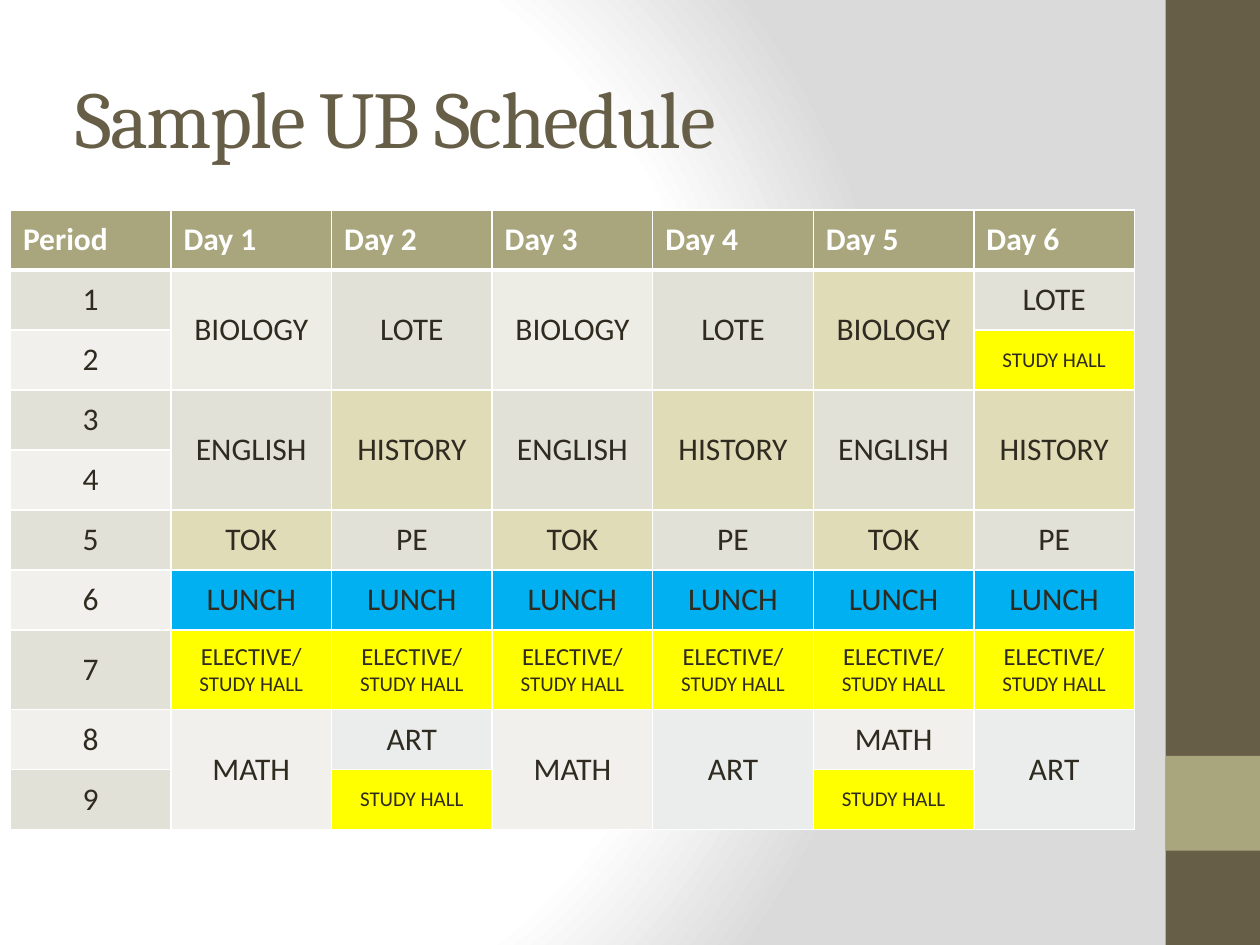
"""Builds the Sample UB Schedule slide: a title, a timetable and a side band."""
import lxml.etree
import pptx
import pptx.dml.color
import pptx.enum.shapes
import pptx.enum.text
import pptx.oxml
import pptx.oxml.ns
import pptx.util

Cm, Pt = pptx.util.Cm, pptx.util.Pt
Rgb = pptx.dml.color.RGBColor.from_string
Align, Anchor = pptx.enum.text.PP_ALIGN, pptx.enum.text.MSO_ANCHOR
qn = pptx.oxml.ns.qn


class Theme:
    head_font, body_font = "Cambria", "Calibri"
    title_size, body_size, mid_size, small_size = Pt(46), Pt(18), Pt(14), Pt(12)
    brown, olive, ink, white, grey = "675E47", "A9A57C", "2F2B20", "FFFFFF", "DADADA"
    band, pale, tan, yellow = "E2E1D7", "F1F0EC", "DFDCB7", "FFFF00"
    fills = {
        "BIOLOGY": "EEEDE5", "LOTE": band, "ENGLISH": band, "HISTORY": tan,
        "TOK": tan, "PE": band, "LUNCH": "00B0F0", "STUDY HALL": yellow,
        "ELECTIVE/\nSTUDY HALL": yellow, "MATH": pale, "ART": "EAEDEB",
    }
    sizes = {"ELECTIVE/": mid_size, "STUDY HALL": small_size}


UP = None
HALL = "STUDY HALL"
plan = [
    ["BIOLOGY", "LOTE", "BIOLOGY", "LOTE", "BIOLOGY", "LOTE"],
    [UP, UP, UP, UP, UP, HALL],
    ["ENGLISH", "HISTORY"] * 3,
    [UP] * 6,
    ["TOK", "PE"] * 3,
    ["LUNCH"] * 6,
    ["ELECTIVE/\nSTUDY HALL"] * 6,
    ["MATH", "ART"] * 3,
    [UP, HALL, UP, UP, HALL, UP],
]
rows = [["Period"] + [f"Day {day}" for day in range(1, 7)]]
rows += [[str(num), *line] for num, line in enumerate(plan, 1)]


def add_edge(cell, side, width):
    """Draw one white border of a cell."""
    edge = lxml.etree.SubElement(
        cell._tc.get_or_add_tcPr(), qn(f"a:ln{side}"), w=str(Pt(width)))
    fill = lxml.etree.SubElement(edge, qn("a:solidFill"))
    lxml.etree.SubElement(fill, qn("a:srgbClr"), val=Theme.white)


deck = pptx.Presentation()
deck.slide_width, deck.slide_height = Cm(25.4), Cm(19.05)
slide = deck.slides.add_slide(deck.slide_layouts[5])

back = slide.background.fill
back.gradient()
grad = slide.background._cSld.find(".//" + qn("a:gradFill"))
for part in list(grad):
    grad.remove(part)
stops = lxml.etree.SubElement(grad, qn("a:gsLst"))
for place, tone in ((0, Theme.white), (75, Theme.white), (100, Theme.grey)):
    stop = lxml.etree.SubElement(stops, qn("a:gs"), pos=str(place * 1000))
    lxml.etree.SubElement(stop, qn("a:srgbClr"), val=tone)
glow = lxml.etree.SubElement(grad, qn("a:path"), {"path": "circle"})
lxml.etree.SubElement(
    glow, qn("a:fillToRect"), l="20000", t="50000", r="100000", b="50000")

for top, height, tone in ((0, 19.05, Theme.brown), (15.24, 1.91, Theme.olive)):
    bar = slide.shapes.add_shape(
        pptx.enum.shapes.MSO_SHAPE.RECTANGLE,
        Cm(23.5), Cm(top), Cm(1.9), Cm(height))
    bar.shadow.inherit = False
    bar.fill.solid()
    bar.fill.fore_color.rgb = Rgb(tone)
    bar.line.fill.background()

title = slide.shapes.title
title.left, title.top, title.width, title.height = Cm(1.27), Cm(0.76), Cm(21.16), Cm(3.18)
frame = title.text_frame
frame.text = "Sample UB Schedule"
frame.auto_size = pptx.enum.text.MSO_AUTO_SIZE.NONE
frame.vertical_anchor = Anchor.MIDDLE
para = frame.paragraphs[0]
para.alignment = Align.LEFT
para.font.name, para.font.size = Theme.head_font, Theme.title_size
para.font.color.rgb = Rgb(Theme.brown)
para.runs[0].font._element.set("spc", "-100")

wide = Cm(22.66)
table = slide.shapes.add_table(
    len(rows), len(rows[0]), Cm(0.21), Cm(4.23), wide, Cm(12.49)).table
table.horz_banding = False
for col in table.columns:
    col.width = wide // len(rows[0])
for num, row in enumerate(table.rows):
    row.height = Cm(1.6 if num == 7 else 1.21)

for r, line in enumerate(rows):
    for c, text in enumerate(line):
        cell = table.cell(r, c)
        for side in "LRTB":
            thick = (r, side) in ((0, "B"), (1, "T"))
            add_edge(cell, side, 3 if thick else 1)
        if text is UP:
            table.cell(r - 1, c).merge(cell)
            continue
        if r == 0:
            tone = Theme.olive
        elif c == 0:
            tone = Theme.band if r % 2 else Theme.pale
        elif text == "BIOLOGY" and c == 5:
            tone = Theme.tan
        else:
            tone = Theme.fills[text]
        cell.fill.solid()
        cell.fill.fore_color.rgb = Rgb(tone)
        cell.vertical_anchor = Anchor.MIDDLE
        cell.text = text
        for para in cell.text_frame.paragraphs:
            para.alignment = Align.CENTER if r else Align.LEFT
            para.font.name = Theme.body_font
            para.font.size = Theme.sizes.get(para.text, Theme.body_size)
            para.font.bold = r == 0
            para.font.color.rgb = Rgb(Theme.ink if r else Theme.white)

deck.save("out.pptx")
